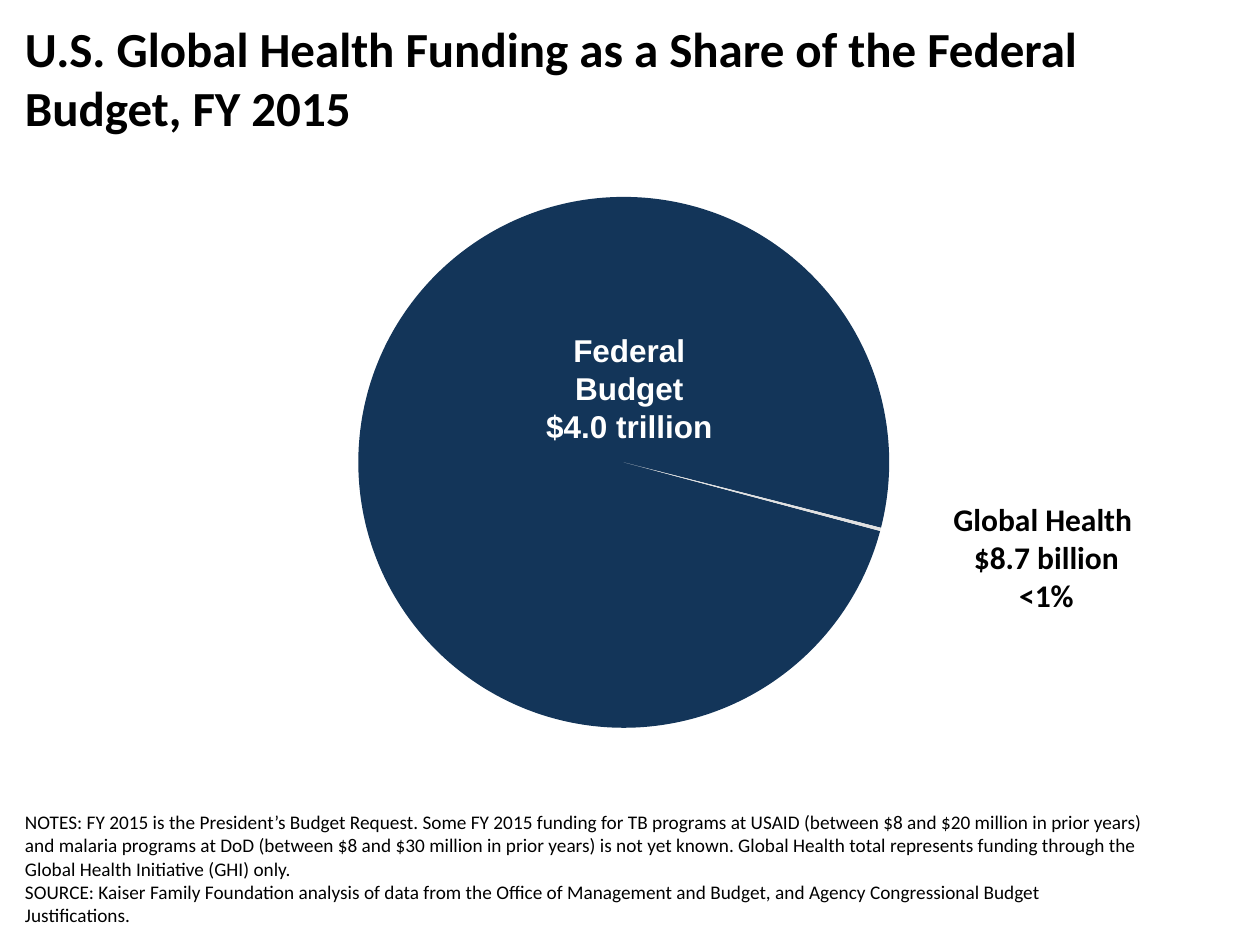
from dataclasses import dataclass

from lxml import etree
from pptx import Presentation
from pptx.chart.data import CategoryChartData
from pptx.dml.color import RGBColor
from pptx.enum.chart import XL_CHART_TYPE as ChartType
from pptx.enum.text import MSO_ANCHOR as Anchor, MSO_AUTO_SIZE as AutoSize, PP_ALIGN as Align
from pptx.oxml import parse_xml
from pptx.oxml.ns import nsdecls, qn
from pptx.slide import Slide
from pptx.util import Inches, Pt

BLACK = RGBColor(0x00, 0x00, 0x00)
WHITE = RGBColor(0xFF, 0xFF, 0xFF)
NAVY = RGBColor(0x13, 0x35, 0x59)
LIGHT_GRAY = RGBColor(0xE1, 0xE1, 0xE1)

CHART_BOX = (0.1, 1.42, 9.8, 4.5)
PIE_DIAMETER = 4.23
FIRST_SLICE_ANGLE = 105


@dataclass(frozen=True)
class TextBlock:
    box: tuple[float, float, float, float]
    paragraphs: tuple[str, ...]
    size: int
    bold: bool = True
    font: str = "Calibri"
    color: RGBColor = BLACK
    align: Align = Align.LEFT
    anchor: Anchor = Anchor.TOP
    wrap: bool = True
    auto_size: AutoSize = AutoSize.NONE


NOTES = TextBlock(
    (0.1, 6.8, 9.1, 0.6),
    (
        "NOTES: FY 2015 is the President’s Budget Request. Some FY 2015 funding for TB programs "
        "at USAID (between $8 and $20 million in prior years) and malaria programs at DoD "
        "(between $8 and $30 million in prior years) is not yet known. Global Health total "
        "represents funding through the Global Health Initiative (GHI) only.",
        "SOURCE: Kaiser Family Foundation analysis of data from the Office of Management and "
        "Budget, and Agency Congressional Budget Justifications.",
    ),
    size=11, bold=False, anchor=Anchor.BOTTOM,
)
TITLE = TextBlock(
    (0.1, 0.1, 9.8, 1),
    ("U.S. Global Health Funding as a Share of the Federal Budget, FY 2015",),
    size=28,
)
FEDERAL_LABEL = TextBlock(
    (4.08, 2.58, 1.83, 0.71), ("Federal Budget", "$4.0 trillion"),
    size=18, font="Arial", color=WHITE, align=Align.CENTER, auto_size=AutoSize.SHAPE_TO_FIT_TEXT,
)
GLOBAL_HEALTH_LABEL = TextBlock(
    (7.46, 3.92, 1.69, 1.01), ("Global Health ", "$8.7 billion", "<1%"),
    size=18, align=Align.CENTER, wrap=False, auto_size=AutoSize.SHAPE_TO_FIT_TEXT,
)


def set_attributes(target: object, values: dict[str, object]) -> None:
    for name, value in values.items():
        setattr(target, name, value)


def add_text(slide: Slide, block: TextBlock) -> None:
    frame = slide.shapes.add_textbox(*map(Inches, block.box)).text_frame
    set_attributes(frame, {
        "word_wrap": block.wrap,
        "auto_size": block.auto_size,
        "vertical_anchor": block.anchor,
    })
    for index, text in enumerate(block.paragraphs):
        paragraph = frame.add_paragraph() if index else frame.paragraphs[0]
        paragraph.alignment = block.align
        run = paragraph.add_run()
        run.text = text
        set_attributes(run.font, {"name": block.font, "size": Pt(block.size), "bold": block.bold})
        run.font.color.rgb = block.color


def centered_layout(width: float, height: float) -> etree.ElementBase:
    """Return a layout for a centred plot, sized as fractions of the chart."""
    values = {"x": (1 - width) / 2, "y": (1 - height) / 2, "w": width, "h": height}
    sizes = "".join(f'<c:{name} val="{value:.2f}"/>' for name, value in values.items())
    return parse_xml(
        f'<c:layout {nsdecls("c")}><c:manualLayout><c:layoutTarget val="inner"/>'
        f'<c:xMode val="edge"/><c:yMode val="edge"/>{sizes}</c:manualLayout></c:layout>'
    )


def add_budget_pie(slide: Slide) -> None:
    data = CategoryChartData()
    data.categories = ["1", "2"]
    data.add_series("Series 1", (100, 0.2))
    chart = slide.shapes.add_chart(ChartType.PIE, *map(Inches, CHART_BOX), data).chart
    set_attributes(chart, {"has_legend": False, "has_title": False})
    set_attributes(chart.font, {"name": "Calibri", "size": Pt(18)})
    chart.font.color.rgb = BLACK

    plot = chart.plots[0]
    plot.vary_by_categories = False
    for index, color in enumerate((NAVY, LIGHT_GRAY)):
        slice_format = plot.series[0].points[index].format
        slice_format.fill.solid()
        slice_format.fill.fore_color.rgb = color
        slice_format.line.fill.background()

    plot_area = chart.element.find(f".//{qn('c:plotArea')}")
    for layout in plot_area.findall(qn("c:layout")):
        plot_area.remove(layout)
    plot_area.insert(0, centered_layout(PIE_DIAMETER / CHART_BOX[2], PIE_DIAMETER / CHART_BOX[3]))

    pie = plot_area.find(qn("c:pieChart"))
    for angle in pie.findall(qn("c:firstSliceAng")):
        pie.remove(angle)
    etree.SubElement(pie, qn("c:firstSliceAng")).set("val", str(FIRST_SLICE_ANGLE))


def main() -> None:
    presentation = Presentation()
    set_attributes(presentation, {"slide_width": Inches(10), "slide_height": Inches(7.5)})
    slide = presentation.slides.add_slide(presentation.slide_layouts[6])
    add_budget_pie(slide)
    for block in (NOTES, TITLE, FEDERAL_LABEL, GLOBAL_HEALTH_LABEL):
        add_text(slide, block)
    presentation.save("out.pptx")


if __name__ == "__main__":
    main()
